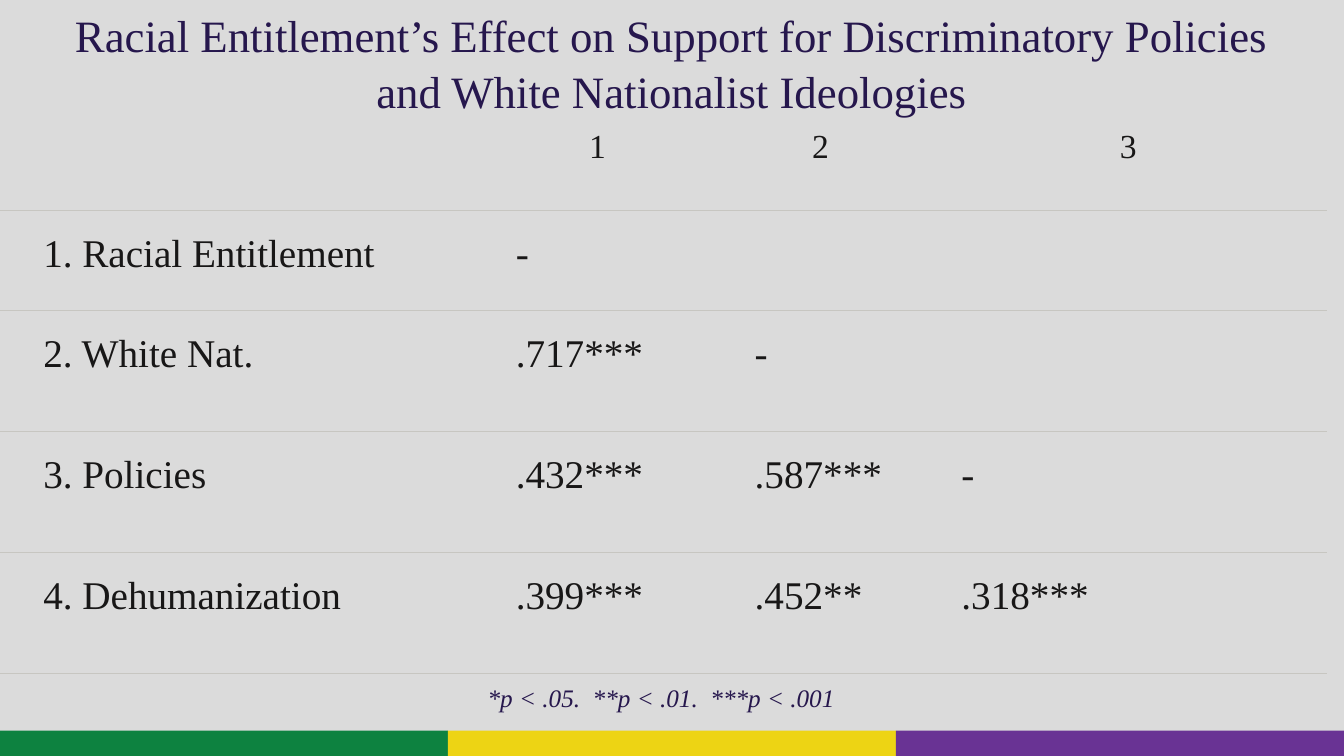
"""Build the slide of racial entitlement correlations."""
from dataclasses import dataclass

from lxml import etree
from pptx import Presentation
from pptx.dml.color import RGBColor
from pptx.enum import shapes, text
from pptx.oxml import ns
from pptx.util import Cm, Pt

SLIDE_WIDTH, SLIDE_HEIGHT = 33.87, 19.05
BAR_HEIGHT = 0.64
BACKGROUND = RGBColor(0xDB, 0xDB, 0xDB)
GREEN = RGBColor(0x0D, 0x82, 0x40)
YELLOW = RGBColor(0xED, 0xD4, 0x14)
PURPLE = RGBColor(0x69, 0x33, 0x94)
NAVY = RGBColor(0x26, 0x17, 0x4D)
INK = RGBColor(0x18, 0x17, 0x17)
RULE = RGBColor(0xC7, 0xC6, 0xC1)

COLUMN_WIDTHS = (11.91, 6.02, 5.21, 10.31)
ROW_HEIGHTS = (2.62, 2.51, 3.05, 3.05, 3.05)
CORRELATIONS = (
    ("", "1", "2", "3"),
    ("1. Racial Entitlement", "-", "", ""),
    ("2. White Nat.", ".717***", "-", ""),
    ("3. Policies", ".432***", ".587***", "-"),
    ("4. Dehumanization", ".399***", ".452**", ".318***"),
)
CELL_FORMAT = {
    "margin_left": Cm(1.09),
    "margin_top": Cm(0.56),
    "margin_right": Cm(0.81),
    "margin_bottom": Cm(0.56),
}
TABLE_FORMAT = {"first_row": False, "horz_banding": False}


@dataclass
class Caption:
    wording: str
    left: float
    top: float
    width: float
    height: float
    size: int
    align: text.PP_ALIGN
    wrap: bool = True
    italic: bool = False
    spacing: float = 1.0


CAPTIONS = (
    Caption("*p < .05.  **p < .01.  ***p < .001", 12.04, 17.07, 9.35, 1.02, 18,
            text.PP_ALIGN.LEFT, wrap=False, italic=True),
    Caption("Racial Entitlement’s Effect on Support for Discriminatory Policies "
            "and White Nationalist Ideologies", 1.12, 0, 31.62, 3.76, 32,
            text.PP_ALIGN.CENTER, spacing=1.05),
)


def write(paragraph, wording: str, size: int, color: RGBColor, italic: bool = False) -> None:
    run = paragraph.add_run()
    run.text = wording
    font_format = {"name": "Times New Roman", "size": Pt(size), "italic": italic}
    for key, value in font_format.items():
        setattr(run.font, key, value)
    run.font.color.rgb = color


def draw_bar(slide, index: int, width: float, color: RGBColor) -> None:
    bar = slide.shapes.add_shape(
        shapes.MSO_SHAPE.RECTANGLE, Cm(index * width), Cm(SLIDE_HEIGHT - BAR_HEIGHT),
        Cm(width), Cm(BAR_HEIGHT))
    bar.shadow.inherit = False
    bar.fill.solid()
    bar.fill.fore_color.rgb = color
    bar.line.fill.background()


def draw_caption(slide, caption: Caption) -> None:
    frame = slide.shapes.add_textbox(
        Cm(caption.left), Cm(caption.top), Cm(caption.width), Cm(caption.height)).text_frame
    frame.word_wrap = caption.wrap
    paragraph = frame.paragraphs[0]
    paragraph.alignment = caption.align
    paragraph.line_spacing = caption.spacing
    write(paragraph, caption.wording, caption.size, NAVY, caption.italic)


def set_borders(cell, ruled_sides: str) -> None:
    properties = cell._tc.get_or_add_tcPr()
    for side in "LRTB":
        border = etree.SubElement(properties, ns.qn(f"a:ln{side}"), w=str(Pt(0.75)))
        if side in ruled_sides:
            fill = etree.SubElement(border, ns.qn("a:solidFill"))
            etree.SubElement(fill, ns.qn("a:srgbClr"), val=str(RULE))
        else:
            etree.SubElement(border, ns.qn("a:noFill"))


def draw_correlations(slide) -> None:
    table = slide.shapes.add_table(
        len(ROW_HEIGHTS), len(COLUMN_WIDTHS), Cm(0), Cm(2.69),
        Cm(sum(COLUMN_WIDTHS)), Cm(sum(ROW_HEIGHTS))).table
    for key, value in TABLE_FORMAT.items():
        setattr(table, key, value)
    for column, width in zip(table.columns, COLUMN_WIDTHS):
        column.width = Cm(width)
    for index, (row, height, entries) in enumerate(zip(table.rows, ROW_HEIGHTS, CORRELATIONS)):
        row.height = Cm(height)
        header = index == 0
        for cell, entry in zip(row.cells, entries):
            for key, value in CELL_FORMAT.items():
                setattr(cell, key, value)
            set_borders(cell, "B" if header else "TB")
            cell.fill.background()
            if entry:
                paragraph = cell.text_frame.paragraphs[0]
                paragraph.alignment = text.PP_ALIGN.CENTER if header else text.PP_ALIGN.LEFT
                write(paragraph, entry, 24 if header else 28, INK)


def main() -> None:
    deck = Presentation()
    deck.slide_width, deck.slide_height = Cm(SLIDE_WIDTH), Cm(SLIDE_HEIGHT)
    slide = deck.slides.add_slide(deck.slide_layouts[6])
    slide.background.fill.solid()
    slide.background.fill.fore_color.rgb = BACKGROUND
    bar_colors = (GREEN, YELLOW, PURPLE)
    for index, color in enumerate(bar_colors):
        draw_bar(slide, index, SLIDE_WIDTH / len(bar_colors), color)
    draw_correlations(slide)
    for caption in CAPTIONS:
        draw_caption(slide, caption)
    deck.save("out.pptx")


if __name__ == "__main__":
    main()
